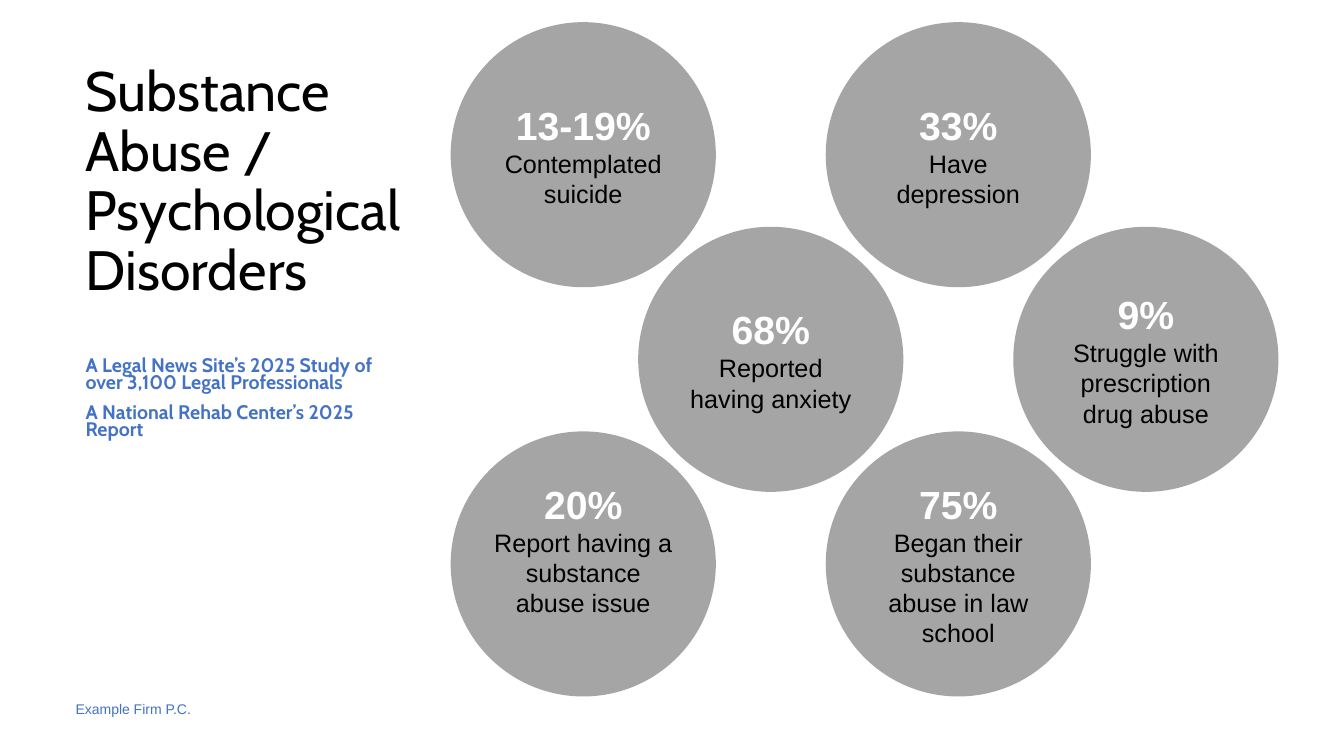
from pptx import Presentation
from pptx.dml.color import RGBColor
from pptx.enum.shapes import MSO_SHAPE
from pptx.enum.text import MSO_ANCHOR, MSO_AUTO_SIZE, PP_ALIGN
from pptx.util import Inches, Pt

COLORS = {"black": "000000", "white": "FFFFFF", "blue": "4472C4", "gray": "A5A5A5"}


def style(p, font, size, color, bold=False):
    for r in p.runs:
        r.font.name = font
        r.font.size = Pt(size)
        r.font.bold = bold
        r.font.color.rgb = RGBColor.from_string(COLORS[color])


prs = Presentation()
prs.slide_width, prs.slide_height = Inches(13.33), Inches(7.5)
s = prs.slides.add_slide(prs.slide_layouts[5])

# Title
title = s.shapes.title
title.left, title.top = Inches(0.75), Inches(0.5)
title.width, title.height = Inches(3.35), Inches(2.63)
tf = title.text_frame
tf.text = "Substance Abuse / Psychological Disorders"
tf.word_wrap = True
tf.auto_size = MSO_AUTO_SIZE.NONE
tf.vertical_anchor = MSO_ANCHOR.MIDDLE
p = tf.paragraphs[0]
p.alignment = PP_ALIGN.LEFT
p.line_spacing = 0.9
style(p, "Cabin", 39.6, "black")

# Studies cited
studies = s.shapes.add_textbox(Inches(0.75), Inches(3.52), Inches(3.35), Inches(1.03))
tf = studies.text_frame
tf.word_wrap = True
tf.text = ("A Legal News Site’s 2025 Study of over 3,100 Legal Professionals\n"
           "A National Rehab Center’s 2025 Report")
for p in tf.paragraphs:
    p.line_spacing = 0.7
    style(p, "Cabin", 14, "blue", bold=True)
tf.paragraphs[1].space_before = Pt(10)

# Circles: column, row, figure, label, side inset, bottom inset
DIAMETER = 2.63
LEFT, TOP = 4.47, 0.22
COL_STEP, ROW_STEP = 1.86, 2.03
circles = [
    (0, 0, "13-19%", "Contemplated suicide", 0, 0.05),
    (1, 1, "68%", "Reported having anxiety", 0.1, 0.05),
    (2, 0, "33%", "Have depression", 0.1, 0.05),
    (3, 1, "9%", "Struggle with prescription drug abuse", 0.1, 0.05),
    (0, 2, "20%", "Report having a substance abuse issue", 0, 0.35),
    (2, 2, "75%", "Began their substance abuse in law school", 0, 0.05),
]
for col, row, figure, label, side, bottom in circles:
    sp = s.shapes.add_shape(
        MSO_SHAPE.OVAL, Inches(LEFT + col * COL_STEP), Inches(TOP + row * ROW_STEP),
        Inches(DIAMETER), Inches(DIAMETER))
    sp.shadow.inherit = False
    sp.fill.solid()
    sp.fill.fore_color.rgb = RGBColor.from_string(COLORS["gray"])
    sp.line.fill.background()
    tf = sp.text_frame
    tf.word_wrap = True
    tf.vertical_anchor = MSO_ANCHOR.MIDDLE
    tf.margin_left = tf.margin_right = Inches(side)
    tf.margin_top, tf.margin_bottom = Inches(0.05), Inches(bottom)
    tf.text = f"{figure}\n{label}"
    for p in tf.paragraphs:
        p.alignment = PP_ALIGN.CENTER
    style(tf.paragraphs[0], "Arial", 28, "white", bold=True)
    style(tf.paragraphs[1], "Arial", 18, "black")

# Firm name
firm = s.shapes.add_textbox(Inches(0.75), Inches(6.95), Inches(5.33), Inches(0.4))
tf = firm.text_frame
tf.word_wrap = True
tf.margin_left = tf.margin_right = tf.margin_top = tf.margin_bottom = 0
tf.text = "Example Firm P.C."
style(tf.paragraphs[0], "Arial", 10, "blue")

prs.save("out.pptx")
